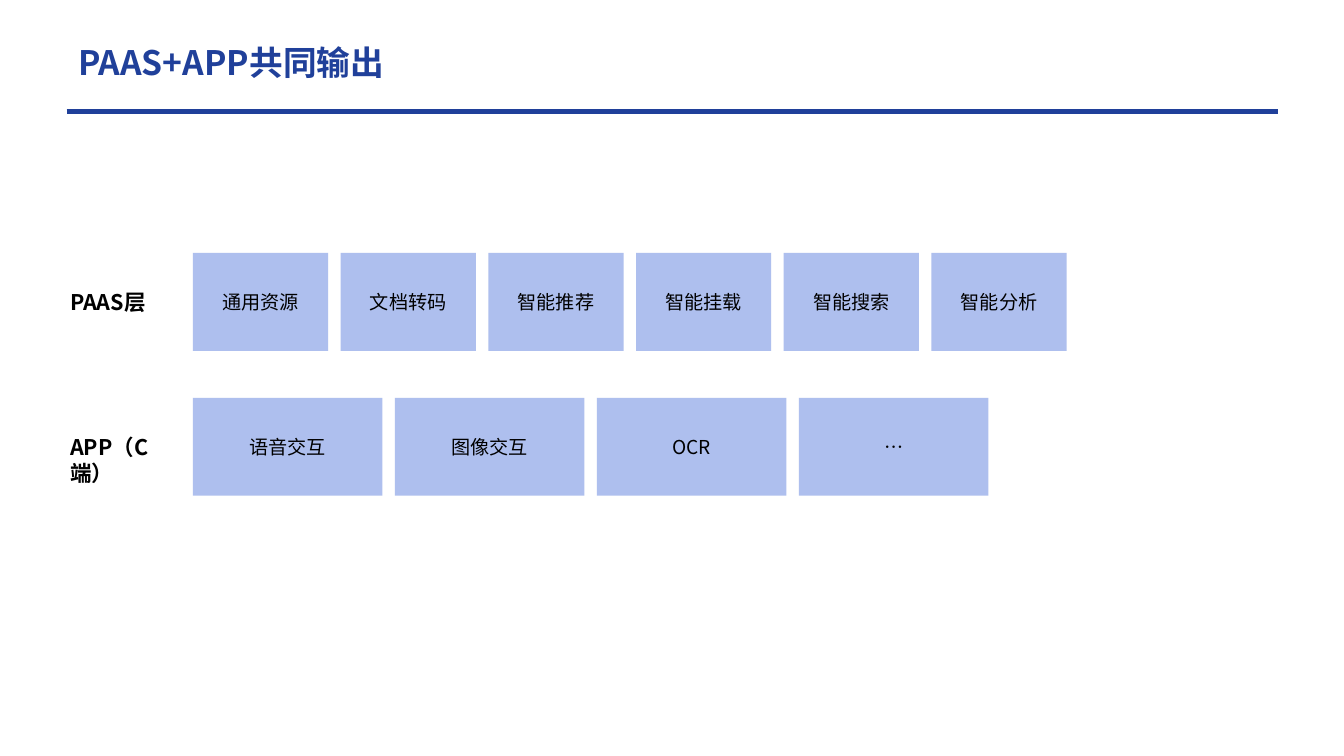
from lxml import etree
from pptx import Presentation
from pptx.dml.color import RGBColor
from pptx.enum import shapes, text
from pptx.oxml import ns
from pptx.util import Pt

# Content
TITLE = "PAAS+APP共同输出"
LAYERS = [
    {"label": "PAAS层", "top": 158.4, "box_width": 84.7,
     "boxes": ["通用资源", "文档转码", "智能推荐", "智能挂载", "智能搜索", "智能分析"]},
    {"label": "APP（C端）", "top": 249.1, "box_width": 118.7,
     "boxes": ["语音交互", "图像交互", "OCR", "…"]},
]

THEME = {
    "font": "Noto Sans CJK SC",
    "blue": RGBColor(0x20, 0x40, 0x9A),
    "box": RGBColor(0x94, 0xAA, 0xE9),
    "black": RGBColor(0, 0, 0),
    "box_opacity": 75,
    "title_size": 21.1,
    "label_size": 13.5,
    "box_size": 12,
}

# Layout in points
SLIDE_WIDTH, SLIDE_HEIGHT = 841.6, 473.38
MARGIN, CONTENT_WIDTH, RULE_TOP = 41.8, 758.2, 69.7
LABEL_LEFT, LABEL_WIDTH, LABEL_HEIGHT, LABEL_DROP = 36.9, 72, 24, 19.2
BOX_LEFT, BOX_HEIGHT, BOX_GAP = 120.8, 61.3, 7.8


def write(shape, words, size, color, bold=False, align=text.PP_ALIGN.LEFT,
          anchor=text.MSO_ANCHOR.MIDDLE):
    frame = shape.text_frame
    frame.word_wrap = True
    frame.vertical_anchor = anchor
    paragraph = frame.paragraphs[0]
    paragraph.text = words
    paragraph.alignment = align
    font = paragraph.font
    font.name, font.size, font.bold = THEME["font"], Pt(size), bold
    font.color.rgb = color
    # East Asian typeface goes right after the Latin one
    latin = paragraph._p.find(".//" + ns.qn("a:latin"))
    latin.addnext(etree.Element(ns.qn("a:ea"), typeface=THEME["font"]))


def add_box(slide, words, left, top, width):
    shape = slide.shapes.add_shape(shapes.MSO_SHAPE.RECTANGLE,
                                   Pt(left), Pt(top), Pt(width), Pt(BOX_HEIGHT))
    shape.shadow.inherit = False
    shape.fill.solid()
    shape.fill.fore_color.rgb = THEME["box"]
    color = shape._element.spPr.find(".//" + ns.qn("a:srgbClr"))
    etree.SubElement(color, ns.qn("a:alpha"), val=str(THEME["box_opacity"] * 1000))
    shape.line.fill.background()
    write(shape, words, THEME["box_size"], THEME["black"], align=text.PP_ALIGN.CENTER)


def main():
    presentation = Presentation()
    presentation.slide_width = Pt(SLIDE_WIDTH)
    presentation.slide_height = Pt(SLIDE_HEIGHT)
    slide = presentation.slides.add_slide(presentation.slide_layouts[6])

    # Title and rule
    title = slide.shapes.add_textbox(Pt(MARGIN), Pt(18.7), Pt(CONTENT_WIDTH), Pt(40.3))
    write(title, TITLE, THEME["title_size"], THEME["blue"], bold=True)
    rule = slide.shapes.add_connector(shapes.MSO_CONNECTOR.STRAIGHT, Pt(MARGIN), Pt(RULE_TOP),
                                      Pt(MARGIN + CONTENT_WIDTH), Pt(RULE_TOP))
    rule.line.color.rgb = THEME["blue"]
    rule.line.width = Pt(3)
    etree.SubElement(rule._element.spPr, ns.qn("a:effectLst"))

    # Layers: a label, then a row of equal boxes
    for layer in LAYERS:
        label = slide.shapes.add_textbox(Pt(LABEL_LEFT), Pt(layer["top"] + LABEL_DROP),
                                         Pt(LABEL_WIDTH), Pt(LABEL_HEIGHT))
        write(label, layer["label"], THEME["label_size"], THEME["black"],
              bold=True, anchor=text.MSO_ANCHOR.TOP)
        pitch = layer["box_width"] + BOX_GAP
        for column, words in enumerate(layer["boxes"]):
            add_box(slide, words, BOX_LEFT + column * pitch, layer["top"], layer["box_width"])

    presentation.save("out.pptx")


if __name__ == "__main__":
    main()
